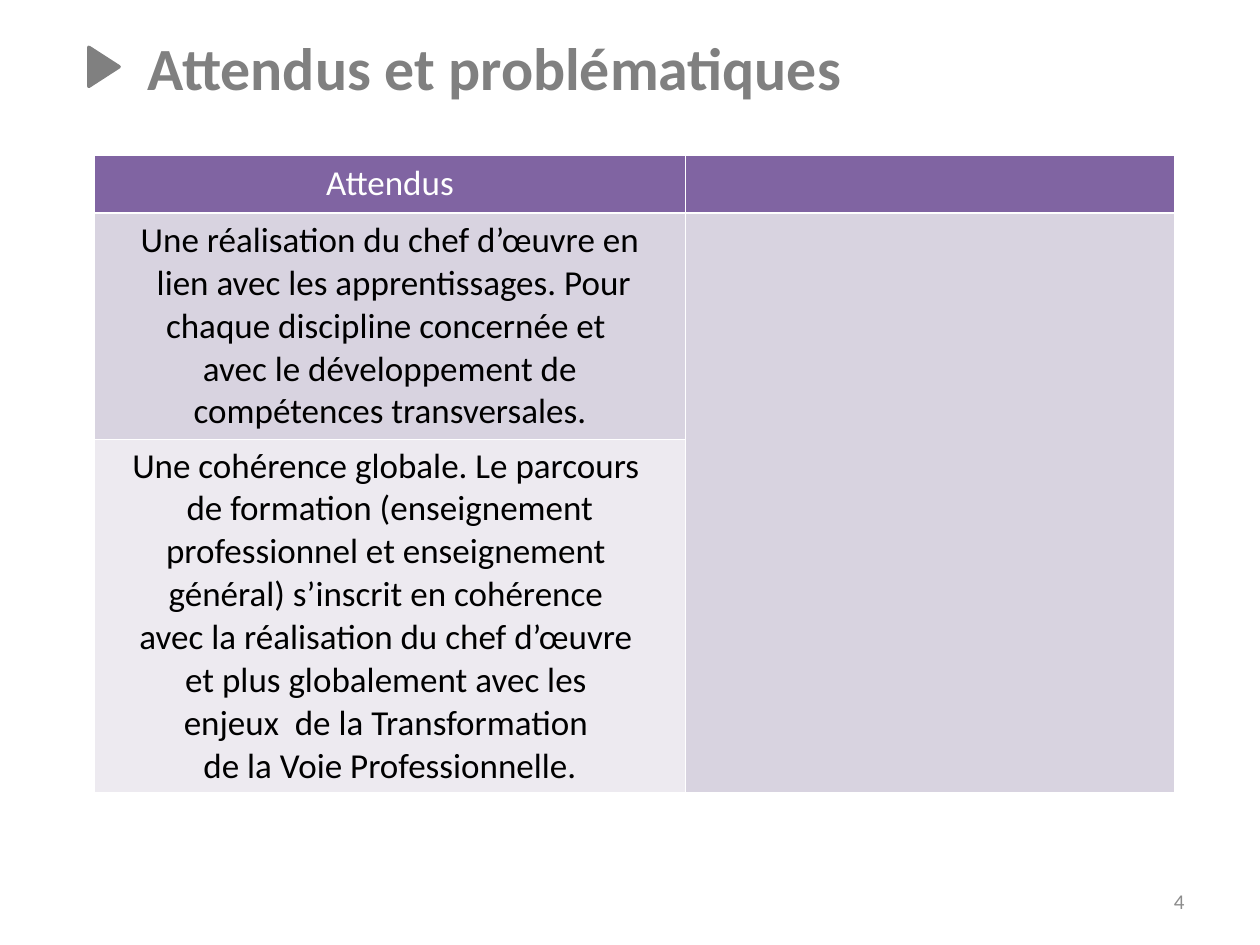
import pptx
import pptx.util
import pptx.dml.color
import pptx.enum.shapes
import pptx.enum.text
import pptx.oxml
import pptx.oxml.ns

Inches, Pt = pptx.util.Inches, pptx.util.Pt
RGBColor = pptx.dml.color.RGBColor
ALIGN = pptx.enum.text.PP_ALIGN
ANCHOR = pptx.enum.text.MSO_ANCHOR

WHITE = RGBColor(0xFF, 0xFF, 0xFF)
BLACK = RGBColor(0, 0, 0)
GREY = RGBColor(0x80, 0x80, 0x80)
LIGHT_GREY = RGBColor(0x8C, 0x8C, 0x8C)
PURPLE = RGBColor(0x80, 0x64, 0xA2)
LILAC = RGBColor(0xD8, 0xD3, 0xE0)
PALE_LILAC = RGBColor(0xED, 0xEA, 0xF0)

# Content
TITLE = "Attendus et problématiques"
PAGE_NUMBER = "4"
COLUMN_WIDTHS = [4.69, 3.88]
# Each row: height, fill, text colour, paragraphs of the first column
ROWS = [
    (0.46, PURPLE, WHITE, ["Attendus"]),
    (1.8, LILAC, BLACK, [
        "Une réalisation du chef d’œuvre en",
        " lien avec les apprentissages. Pour chaque discipline concernée et ",
        "avec le développement de compétences transversales.",
    ]),
    (2.8, PALE_LILAC, BLACK, [
        "Une cohérence globale. Le parcours ",
        "de formation (enseignement professionnel et enseignement ",
        "général) s’inscrit en cohérence ",
        "avec la réalisation du chef d’œuvre ",
        "et plus globalement avec les ",
        "enjeux  de la Transformation ",
        "de la Voie Professionnelle.",
    ]),
]


def write(tf, paragraphs, size=20, color=BLACK, bold=False, align=ALIGN.CENTER):
    tf.word_wrap = True
    for i, text in enumerate(paragraphs):
        p = tf.paragraphs[0] if i == 0 else tf.add_paragraph()
        p.alignment = align
        r = p.add_run()
        r.text = text
        r.font.name = "Calibri"
        r.font.size = Pt(size)
        r.font.bold = bold
        r.font.color.rgb = color


def style_cell(cell, fill):
    cell.vertical_anchor = ANCHOR.MIDDLE
    cell.margin_left = cell.margin_right = Inches(0.09)
    cell.margin_top = cell.margin_bottom = Inches(0.04)
    cell.fill.solid()
    cell.fill.fore_color.rgb = fill
    # Borders come before the fill in the cell properties
    for i, side in enumerate("LRTB"):
        border = pptx.oxml.parse_xml(
            f'<a:ln{side} {pptx.oxml.ns.nsdecls("a")} w="{Pt(1)}"><a:solidFill>'
            f'<a:srgbClr val="{WHITE}"/></a:solidFill></a:ln{side}>')
        cell._tc.get_or_add_tcPr().insert(i, border)


prs = pptx.Presentation()
prs.slide_width, prs.slide_height = Inches(10), Inches(7.5)
slide = prs.slides.add_slide(prs.slide_layouts[6])

# Title marker
sp = slide.shapes.add_shape(pptx.enum.shapes.MSO_SHAPE.ISOSCELES_TRIANGLE,
                            Inches(0.67), Inches(0.41), Inches(0.31), Inches(0.24))
sp.rotation = 90
sp.shadow.inherit = False
sp.fill.solid()
sp.fill.fore_color.rgb = GREY
sp.line.color.rgb = GREY
sp.line.width = Pt(2)
sp.line._get_or_add_ln().append(
    pptx.oxml.parse_xml(f'<a:round {pptx.oxml.ns.nsdecls("a")}/>'))

# Page number
sp = slide.shapes.add_textbox(Inches(7.17), Inches(6.95), Inches(2.33), Inches(0.4))
sp.text_frame.vertical_anchor = ANCHOR.MIDDLE
write(sp.text_frame, [PAGE_NUMBER], size=12, color=LIGHT_GREY, align=ALIGN.RIGHT)

# Table
table = slide.shapes.add_table(
    len(ROWS), len(COLUMN_WIDTHS), Inches(0.75), Inches(1.23),
    Inches(sum(COLUMN_WIDTHS)), Inches(sum(row[0] for row in ROWS))).table
for column, width in zip(table.columns, COLUMN_WIDTHS):
    column.width = Inches(width)
for i, (height, fill, color, paragraphs) in enumerate(ROWS):
    table.rows[i].height = Inches(height)
    for cell in table.rows[i].cells:
        style_cell(cell, fill)
    write(table.cell(i, 0).text_frame, paragraphs, color=color)
table.cell(1, 1).merge(table.cell(2, 1))

# Title
sp = slide.shapes.add_textbox(Inches(-0.2), Inches(0.19), Inches(8.25), Inches(0.78))
write(sp.text_frame, [TITLE], size=34.2, color=GREY, bold=True)

prs.save("out.pptx")
